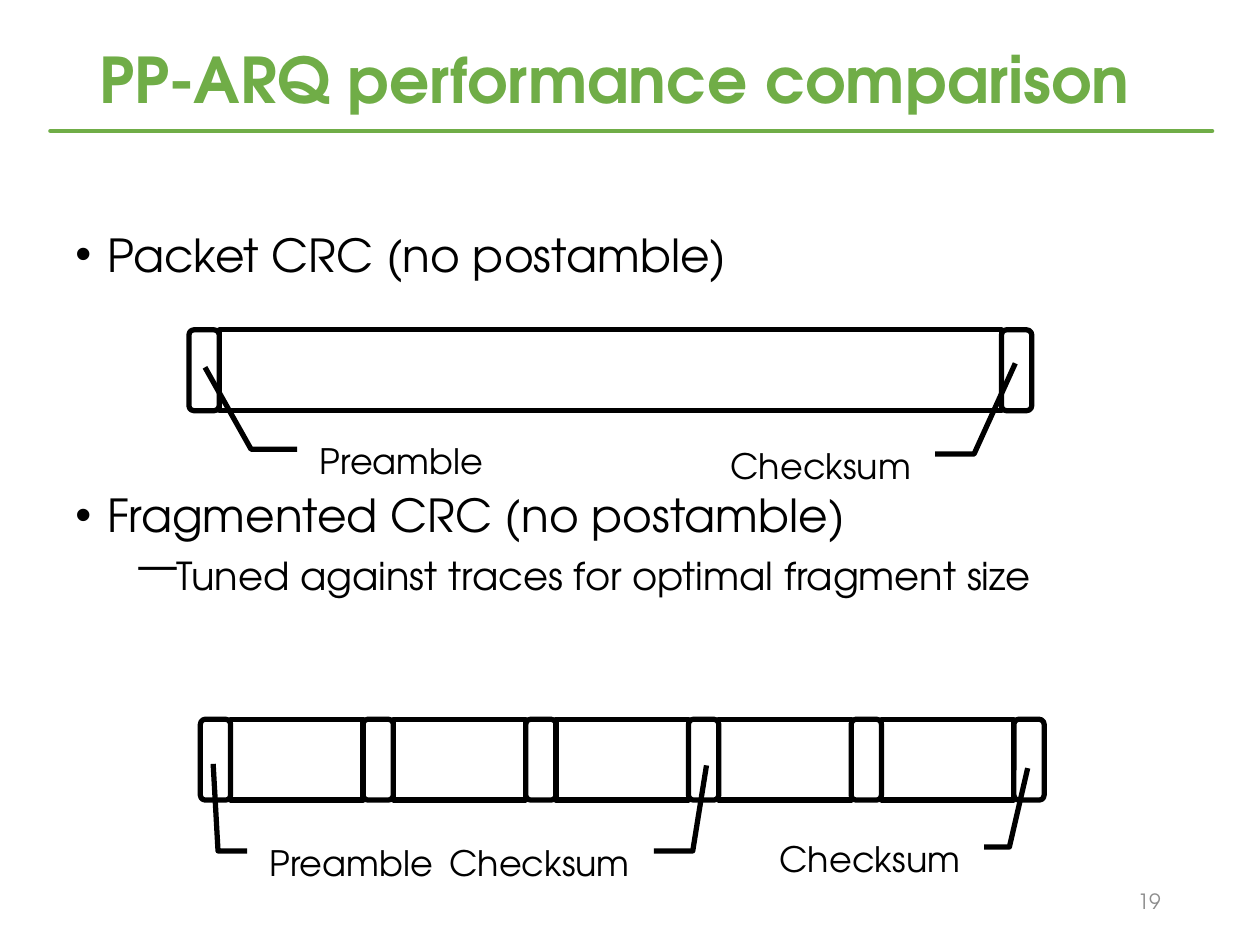
"""Build a slide that compares packet CRC with fragmented CRC."""
import pptx
import pptx.dml.color
import pptx.enum.shapes
import pptx.enum.text
import pptx.oxml.ns
import pptx.util
from lxml import etree

Cm = pptx.util.Cm
Pt = pptx.util.Pt
SHAPE = pptx.enum.shapes.MSO_SHAPE
ALIGN = pptx.enum.text.PP_ALIGN
FONT = "TeX Gyre Adventor"
GREEN, BLACK, GREY = "70AD47", "000000", "8C8C8C"
CAP, HIGH = 0.61, 1.63


def paint(item, tone):
    item.rgb = pptx.dml.color.RGBColor.from_string(tone)


def add_tag(base, name, **pairs):
    return etree.SubElement(base, pptx.oxml.ns.qn(name), **pairs)


def add_run(para, text, size, tone=BLACK, bold=False):
    run = para.add_run()
    run.text = text
    run.font.name = FONT
    run.font.size = Pt(size)
    run.font.bold = bold
    paint(run.font.color, tone)


def add_box(page, left, top, width, high, middle=False):
    frame = page.shapes.add_textbox(Cm(left), Cm(top), Cm(width), Cm(high)).text_frame
    frame.word_wrap = True
    if middle:
        frame.vertical_anchor = pptx.enum.text.MSO_ANCHOR.MIDDLE
    return frame


def add_point(para, text, size, mark, left, gap):
    para.space_before = Pt(gap)
    props = para._p.get_or_add_pPr()
    props.set("marL", str(Cm(left)))
    props.set("indent", str(-Cm(0.64)))
    add_tag(props, "a:buFont", typeface="Arial")
    add_tag(props, "a:buChar", char=mark)
    add_run(para, text, size)


def add_rule(page, left, right, top):
    rule = page.shapes.add_connector(
        pptx.enum.shapes.MSO_CONNECTOR.STRAIGHT, Cm(left), Cm(top), Cm(right), Cm(top))
    paint(rule.line.color, GREEN)
    rule.line.width = Pt(2.75)
    rule.line._ln.set("cap", "rnd")
    add_tag(rule._element.spPr, "a:effectLst")


def add_shape(group, kind, left, top, width, high):
    shape = group.shapes.add_shape(kind, Cm(left), Cm(top), Cm(width), Cm(high))
    shape.shadow.inherit = False
    shape.fill.background()
    paint(shape.line.color, BLACK)
    shape.line.width = Pt(3)
    return shape


def add_packet(group, left, top, count, width):
    """Draw count blocks of data with a cap before, between and after them."""
    for step in range(count + 1):
        edge = left + step * (CAP + width)
        if step < count:
            add_shape(group, SHAPE.RECTANGLE, edge + CAP, top, width, HIGH)
        add_shape(group, SHAPE.ROUNDED_RECTANGLE, edge, top, CAP, HIGH)


def add_label(group, text, left, top, width, near, bend, tip, align):
    shape = add_shape(group, SHAPE.LINE_CALLOUT_2_NO_BORDER, left, top, width, 1.5)
    for spot, value in enumerate((0.21, near, 0.21, bend, tip[1], tip[0])):
        shape.adjustments[spot] = value
    frame = shape.text_frame
    frame.word_wrap = True
    frame.vertical_anchor = pptx.enum.text.MSO_ANCHOR.TOP
    para = frame.paragraphs[0]
    para.alignment = align
    add_run(para, text, 20)


def add_head(page):
    add_rule(page, 1.02, 24.43, 2.64)
    para = add_box(page, 1.75, 0.74, 21.9, 1.88, True).paragraphs[0]
    para.line_spacing = 0.9
    add_run(para, "PP-ARQ performance comparison", 36, GREEN, True)


def add_body(page):
    frame = add_box(page, 1.27, 4.45, 22.86, 10.06)
    add_point(frame.paragraphs[0], "Packet CRC (no postamble)", 26, "•", 0.64, 0)
    add_point(frame.add_paragraph(), "Fragmented CRC (no postamble)", 26, "•", 0.64, 117.5)
    add_point(frame.add_paragraph(), "Tuned against traces for optimal fragment size",
              22, "⎻", 1.91, 6)


def add_count(page):
    para = add_box(page, 17.93, 17.65, 5.72, 1.02, True).paragraphs[0]
    para.alignment = ALIGN.RIGHT
    add_run(para, "19", 12, GREY)


def main():
    deck = pptx.Presentation()
    deck.slide_width, deck.slide_height = Cm(25.4), Cm(19.05)
    page = deck.slides.add_slide(deck.slide_layouts[6])
    add_head(page)
    add_count(page)
    add_body(page)
    whole = page.shapes.add_group_shape()
    add_packet(whole, 3.81, 6.65, 1, 15.77)
    add_label(whole, "Preamble", 6.2, 8.74, 4.22, -0.05, -0.27, (-0.49, -0.89), ALIGN.LEFT)
    add_label(whole, "Checksum", 14, 8.84, 4.62, 1.05, 1.22, (1.4, -1.01), ALIGN.RIGHT)
    parts = page.shapes.add_group_shape()
    add_packet(parts, 4.04, 14.5, 5, 2.67)
    add_label(parts, "Preamble", 5.18, 16.84, 4.9, -0.04, -0.16, (-0.18, -0.96), ALIGN.LEFT)
    add_label(parts, "Checksum", 8.33, 16.84, 4.62, 1.05, 1.22, (1.28, -0.94), ALIGN.RIGHT)
    add_label(parts, "Checksum", 14.99, 16.76, 4.62, 1.05, 1.16, (1.24, -0.85), ALIGN.RIGHT)
    deck.save("out.pptx")


if __name__ == "__main__":
    main()
